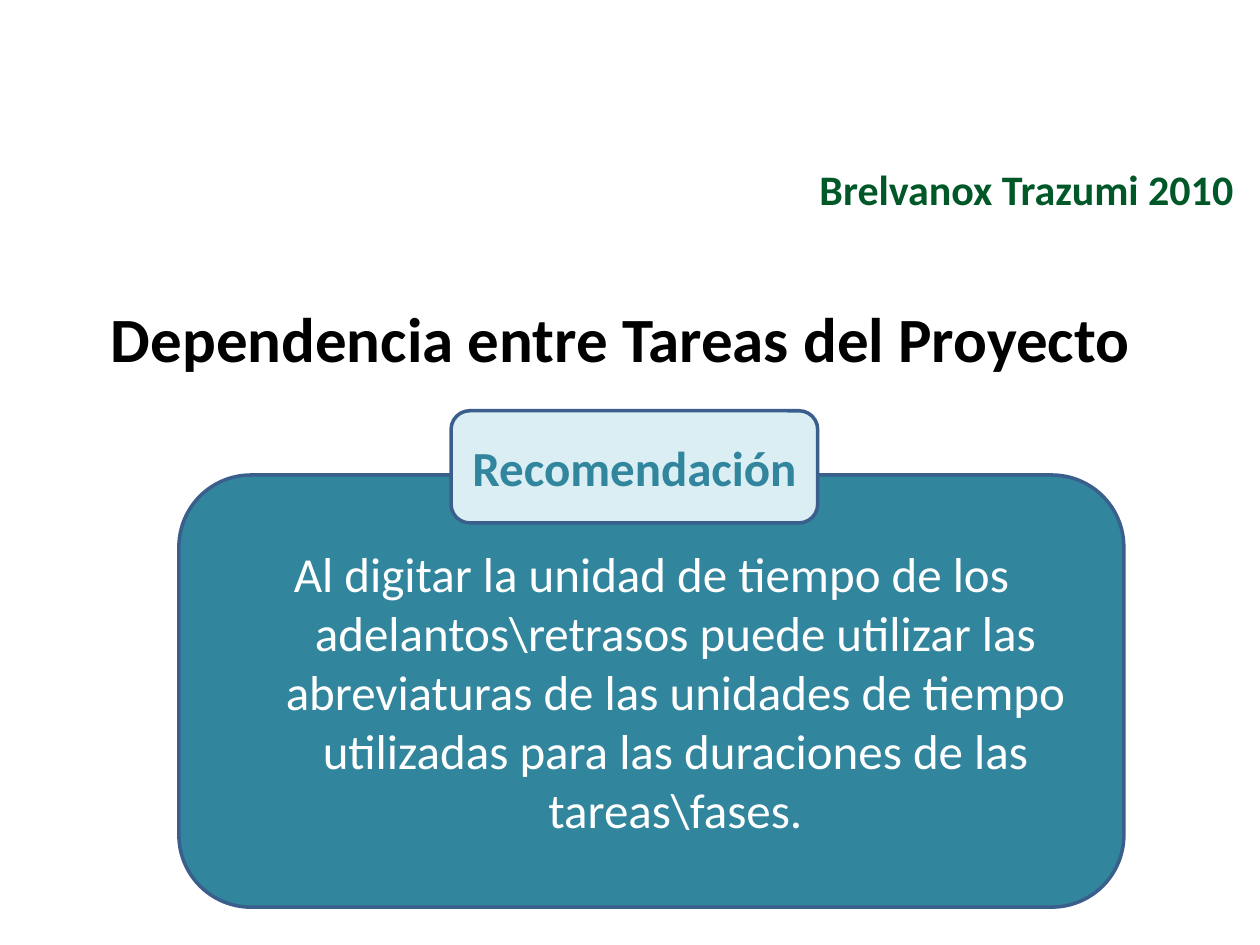
from pptx import Presentation
from pptx.dml.color import RGBColor
from pptx.enum import shapes, text
from pptx.util import Inches, Pt

BLACK = RGBColor(0x00, 0x00, 0x00)
WHITE = RGBColor(0xFF, 0xFF, 0xFF)
GREEN = RGBColor(0x00, 0x58, 0x28)
TEAL = RGBColor(0x31, 0x85, 0x9C)
PALE_TEAL = RGBColor(0xDB, 0xEE, 0xF4)
BORDER = RGBColor(0x3A, 0x5F, 0x8C)

COURSE = "Brelvanox Trazumi 2010"
HEADING = "Dependencia entre Tareas del Proyecto"
LABEL = "Recomendación"
ADVICE = (
    "Al digitar la unidad de tiempo de los adelantos\\retrasos puede utilizar las "
    "abreviaturas de las unidades de tiempo utilizadas para las duraciones de las "
    "tareas\\fases."
)

# left, top, width, height in inches
COURSE_BOX = (5.39, 1.15, 4.5, 0.69)
HEADING_BOX = (0.4, 2.33, 9.08, 4.95)
# box, fill, wording, text colour, bold, hanging indent
CARDS = [
    ((1.42, 3.77, 7.5, 3.43), TEAL, ADVICE, WHITE, False, True),
    ((3.58, 3.26, 2.91, 0.89), PALE_TEAL, LABEL, TEAL, True, False),
]
INDENT = Inches(0.38)


def place(shape, box):
    for side, length in zip(("left", "top", "width", "height"), box):
        setattr(shape, side, Inches(length))


def write(shape, wording, size, color, bold, align, anchor):
    """Fill the shape with one formatted paragraph and return its properties element."""
    frame = shape.text_frame
    frame.word_wrap = True
    frame.auto_size = text.MSO_AUTO_SIZE.NONE
    frame.vertical_anchor = anchor
    frame.text = wording
    paragraph = frame.paragraphs[0]
    paragraph.alignment = align
    paragraph.space_before = Pt(0)
    font = paragraph.runs[0].font
    for name, value in {"name": "Calibri", "size": Pt(size), "bold": bold}.items():
        setattr(font, name, value)
    font.color.rgb = color
    return paragraph._p.get_or_add_pPr()


def indent(properties, first_line):
    properties.set("marL", str(INDENT))
    properties.set("indent", str(first_line))


def main():
    deck = Presentation()
    deck.slide_width, deck.slide_height = Inches(10), Inches(7.5)
    slide = deck.slides.add_slide(deck.slide_layouts[1])
    course, heading = slide.placeholders
    middle, center = text.MSO_ANCHOR.MIDDLE, text.PP_ALIGN.CENTER

    place(course, COURSE_BOX)
    write(course, COURSE, 24, GREEN, True, text.PP_ALIGN.RIGHT, middle)

    place(heading, HEADING_BOX)
    properties = write(heading, HEADING, 36, BLACK, True, text.PP_ALIGN.LEFT, text.MSO_ANCHOR.TOP)
    indent(properties, 0)
    bullet_off = properties.makeelement(
        "{http://schemas.openxmlformats.org/drawingml/2006/main}buNone", {})
    properties.append(bullet_off)

    recommendation = slide.shapes.add_group_shape()
    for box, fill, wording, color, bold, hanging in CARDS:
        card = recommendation.shapes.add_shape(
            shapes.MSO_SHAPE.ROUNDED_RECTANGLE, *map(Inches, box))
        card.shadow.inherit = False
        card.fill.solid()
        card.fill.fore_color.rgb = fill
        card.line.color.rgb = BORDER
        card.line.width = Pt(2)
        properties = write(card, wording, 28, color, bold, center, middle)
        if hanging:
            indent(properties, -INDENT)

    deck.save("out.pptx")


if __name__ == "__main__":
    main()
